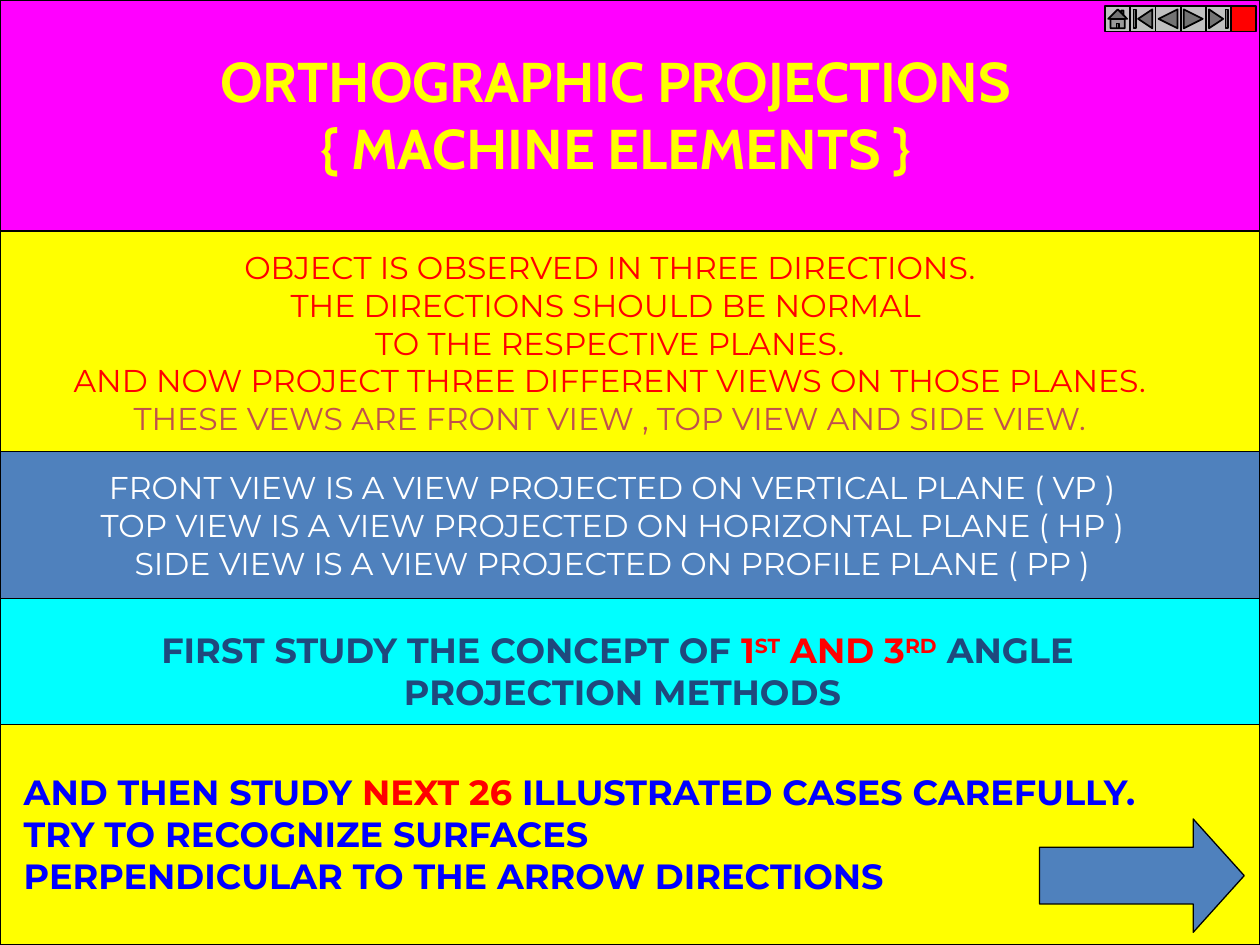
import pptx
import pptx.util
import pptx.dml.color
import pptx.enum.shapes
import pptx.enum.text

Pt = pptx.util.Pt
SHAPES = pptx.enum.shapes.MSO_SHAPE
ALIGN = pptx.enum.text.PP_ALIGN

SLIDE_WIDTH, SLIDE_HEIGHT = 720, 540
RED, YELLOW, BLUE = "FF0000", "FFFF00", "4F81BD"
NAVY, INK = "1F497D", "0000FF"


def rgb(hex_code):
    return pptx.dml.color.RGBColor.from_string(hex_code)


def add_outlined(slide, preset, left, top, width, height, fill, line_width=0.75):
    shape = slide.shapes.add_shape(preset, Pt(left), Pt(top), Pt(width), Pt(height))
    shape.shadow.inherit = False
    shape.fill.solid()
    shape.fill.fore_color.rgb = rgb(fill)
    shape.line.color.rgb = rgb("000000")
    shape.line.width = Pt(line_width)
    return shape


def add_text(slide, box, lines, font, size, bold=False, align=ALIGN.CENTER):
    """Each line is a list of (text, colour) or (text, colour, True for superscript)."""
    frame = slide.shapes.add_textbox(*(Pt(length) for length in box)).text_frame
    frame.word_wrap = True
    for index, line in enumerate(lines):
        paragraph = frame.paragraphs[0] if index == 0 else frame.add_paragraph()
        paragraph.alignment = align
        for text, color, *superscript in line:
            run = paragraph.add_run()
            run.text = text
            run.font.name = font
            run.font.size = Pt(size)
            run.font.bold = bold
            run.font.color.rgb = rgb(color)
            if superscript:
                run._r.get_or_add_rPr().set("baseline", "30000")


def add_bands(slide):
    top = 0
    for height, fill in ((132, "FF00FF"), (126, YELLOW), (84, BLUE),
                         (72, "00FFFF"), (126, YELLOW)):
        add_outlined(slide, SHAPES.RECTANGLE, 0, top, SLIDE_WIDTH, height, fill)
        top += height


def add_navigation(slide):
    side = 14.4
    buttons = (SHAPES.ACTION_BUTTON_HOME, SHAPES.ACTION_BUTTON_BEGINNING,
               SHAPES.ACTION_BUTTON_BACK_OR_PREVIOUS,
               SHAPES.ACTION_BUTTON_FORWARD_OR_NEXT,
               SHAPES.ACTION_BUTTON_END, SHAPES.ACTION_BUTTON_CUSTOM)
    for index, button in enumerate(buttons):
        fill = RED if button == SHAPES.ACTION_BUTTON_CUSTOM else "C0C0C0"
        add_outlined(slide, button, 631.5 + index * side, 3.6, side, side, fill, 1)


def main():
    deck = pptx.Presentation()
    deck.slide_width, deck.slide_height = Pt(SLIDE_WIDTH), Pt(SLIDE_HEIGHT)
    slide = deck.slides.add_slide(deck.slide_layouts[6])

    add_bands(slide)

    # Title
    add_text(slide, (90.7, 23, 522.7, 84.2), [
        [("ORTHOGRAPHIC PROJECTIONS", YELLOW)],
        [("{ MACHINE ELEMENTS }", YELLOW)],
    ], "Cabin", 32, bold=True)

    # Directions of observation
    add_text(slide, (9.4, 138.2, 678.2, 115.2), [
        [("OBJECT IS OBSERVED IN THREE DIRECTIONS.", RED)],
        [("THE DIRECTIONS SHOULD BE NORMAL ", RED)],
        [("TO THE RESPECTIVE PLANES.", RED)],
        [("AND NOW PROJECT THREE DIFFERENT VIEWS ON THOSE PLANES.", RED)],
        [("THESE VEWS ARE FRONT VIEW , TOP VIEW AND SIDE VIEW.", "C0504D")],
    ], "Montserrat", 18)

    # Views and their planes
    views = (("FRONT", "VERTICAL PLANE ( VP )"), ("TOP", "HORIZONTAL PLANE ( HP )"),
             ("SIDE", "PROFILE PLANE ( PP )"))
    add_text(slide, (23.8, 264.2, 652.3, 72),
             [[(f"{view} VIEW IS A VIEW PROJECTED ON {plane}", "FFFFFF")]
              for view, plane in views], "Montserrat", 18)

    # Angle projection methods
    add_text(slide, (59.8, 355.7, 591.8, 55.4), [
        [("FIRST STUDY THE CONCEPT OF ", NAVY), ("1", RED), ("ST", RED, True),
         (" AND 3", RED), ("RD", RED, True), (" ANGLE ", NAVY)],
        [("PROJECTION METHODS", NAVY)],
    ], "Montserrat", 20, bold=True)

    # Illustrated cases
    add_text(slide, (6.5, 437, 707.8, 79.2), [
        [("AND THEN STUDY ", INK), ("NEXT 26", RED),
         (" ILLUSTRATED CASES CAREFULLY.", INK)],
        [("TRY TO RECOGNIZE SURFACES", INK)],
        [("PERPENDICULAR TO THE ARROW DIRECTIONS", INK)],
    ], "Montserrat", 20, bold=True, align=ALIGN.LEFT)

    # Arrow and navigation buttons
    arrow = add_outlined(slide, SHAPES.RIGHT_ARROW, 594, 468, 117, 64.8, BLUE)
    arrow.adjustments[0], arrow.adjustments[1] = 0.5, 0.45
    add_navigation(slide)

    deck.save("out.pptx")


if __name__ == "__main__":
    main()
